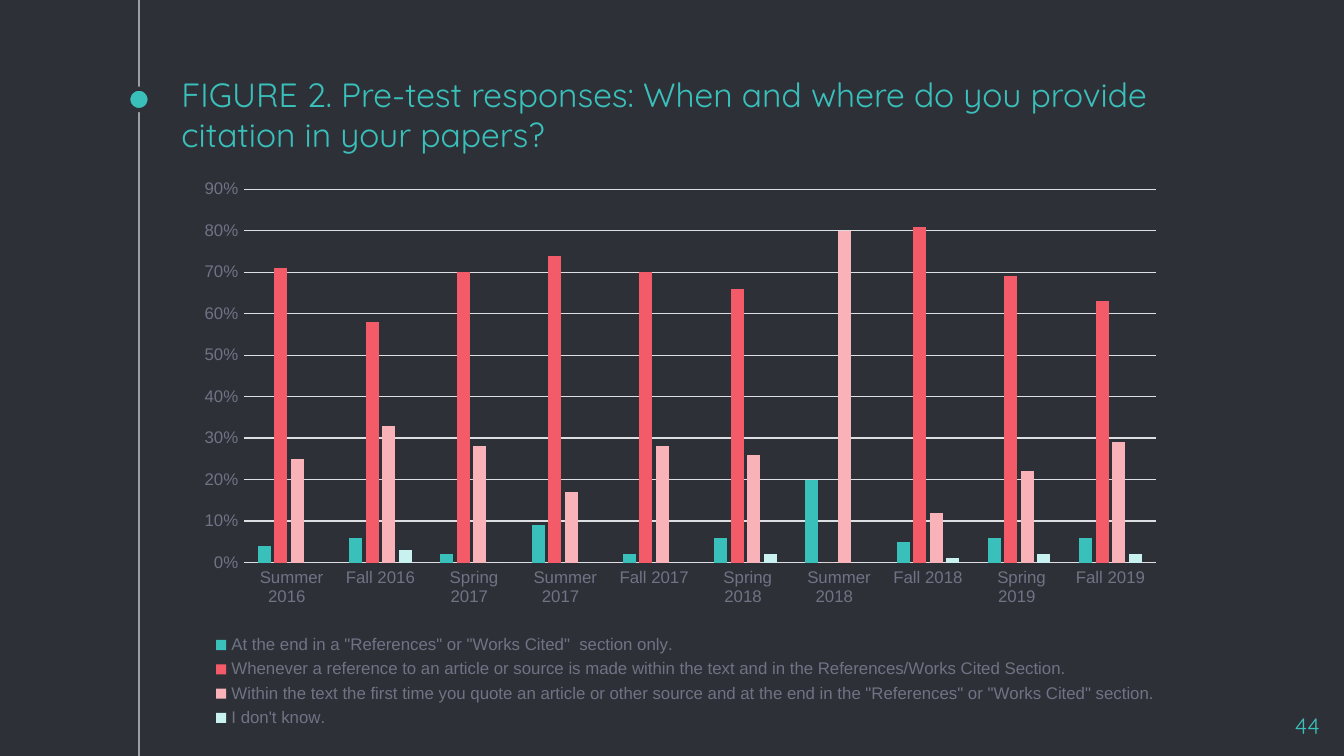
from lxml import etree
from pptx import Presentation
from pptx.chart.data import CategoryChartData as Data
from pptx.dml.color import RGBColor as RGB
from pptx.enum.chart import XL_CHART_TYPE as Kind, XL_LEGEND_POSITION as Side, XL_TICK_MARK as Tick
from pptx.enum.shapes import MSO_CONNECTOR as Conn, MSO_SHAPE as Shape
from pptx.enum.text import MSO_ANCHOR as Anchor, MSO_AUTO_SIZE as Fit, PP_ALIGN as Align
from pptx.oxml.ns import qn
from pptx.util import Pt

TITLE = "FIGURE 2. Pre-test responses: When and where do you provide citation in your papers?"
PAGE = "44"
TERMS = ["Summer 2016", "Fall 2016", "Spring 2017", "Summer 2017", "Fall 2017",
         "Spring 2018", "Summer 2018", "Fall 2018", "Spring 2019", "Fall 2019"]
SERIES = [
    ('At the end in a "References" or "Works Cited"  section only.', "39C0BA",
     [0.04, 0.06, 0.02, 0.09, 0.02, 0.06, 0.2, 0.05, 0.06, 0.06]),
    ("Whenever a reference to an article or source is made within the text"
     " and in the References/Works Cited Section.", "F35B69",
     [0.71, 0.58, 0.7, 0.74, 0.7, 0.66, 0, 0.81, 0.69, 0.63]),
    ("Within the text the first time you quote an article or other source"
     ' and at the end in the "References" or "Works Cited" section.', "FAB2B9",
     [0.25, 0.33, 0.28, 0.17, 0.28, 0.26, 0.8, 0.12, 0.22, 0.29]),
    ("I don't know.", "C9F1EF",
     [0, 0.03, 0, 0, 0, 0.02, 0, 0.01, 0.02, 0.02]),
]
DARK, TEAL, GREY, PALE, RAIL = "2E3037", "39C0BA", "6F7485", "DEDFE3", "999FA9"


def paint(fill, color):
    fill.solid()
    fill.fore_color.rgb = RGB.from_string(color)


def stroke(line, color, width):
    paint(line.fill, color)
    line.width = Pt(width)


def style(font, name, size, color):
    font.name, font.size = name, Pt(size)
    paint(font.fill, color)


def write(shape, text, size, anchor, align):
    frame = shape.text_frame
    frame.text = text
    frame.word_wrap, frame.auto_size = True, Fit.NONE
    frame.vertical_anchor = anchor
    frame.margin_left = frame.margin_right = Pt(7.2)
    frame.margin_top = frame.margin_bottom = Pt(7.2)
    para = frame.paragraphs[0]
    para.alignment = align
    style(para.runs[0].font, "Quicksand", size, TEAL)


def layout(box, inner, **sizes):
    for old in box.findall(qn("c:layout")):
        box.remove(old)
    node = etree.Element(qn("c:layout"))
    manual = etree.SubElement(node, qn("c:manualLayout"))
    parts = {"xMode": "edge", "yMode": "edge", **sizes}
    if inner:
        parts = {"layoutTarget": "inner", **parts}
    for tag, val in parts.items():
        etree.SubElement(manual, qn("c:" + tag)).set("val", str(val))
    box.insert(0 if inner else 1, node)


deck = Presentation()
deck.slide_width, deck.slide_height = Pt(720), Pt(405)
slide = deck.slides.add_slide(deck.slide_layouts[5])
paint(slide.background.fill, DARK)
shapes = slide.shapes

rail = shapes.add_connector(Conn.STRAIGHT, Pt(74.4), Pt(0), Pt(74.4), Pt(405))
stroke(rail.line, RAIL, 0.75)
etree.SubElement(rail._element.spPr, qn("a:effectLst"))

dot = shapes.add_shape(Shape.OVAL, Pt(68.7), Pt(47.5), Pt(11.5), Pt(11.5))
dot.shadow.inherit = False
paint(dot.fill, TEAL)
stroke(dot.line, DARK, 2.25)

title = shapes.title
title.left, title.top, title.width, title.height = Pt(90), Pt(62.6), Pt(540), Pt(27.4)
write(title, TITLE, 18, Anchor.BOTTOM, Align.LEFT)

page = shapes.add_textbox(Pt(671), Pt(374.4), Pt(43.2), Pt(24.5))
write(page, PAGE, 12, Anchor.TOP, Align.RIGHT)

data = Data(number_format="0%")
data.categories = [f" {term} " for term in TERMS]
for name, _, vals in SERIES:
    data.add_series(name, vals)
chart = shapes.add_chart(Kind.COLUMN_CLUSTERED, Pt(98.6), Pt(89.3),
                         Pt(531.4), Pt(303.1), data).chart
chart.has_title = False
style(chart.font, "Arial", 10, DARK)

plot = chart.plots[0]
plot.gap_width, plot.overlap, plot.vary_by_categories = 219, -27, False
for bars, (_, color, _) in zip(plot.series, SERIES):
    paint(bars.format.fill, color)
    bars.invert_if_negative = False

cats, vals = chart.category_axis, chart.value_axis
for axis in (cats, vals):
    axis.major_tick_mark = axis.minor_tick_mark = Tick.NONE
    style(axis.tick_labels.font, "Arial", 9, GREY)
stroke(cats.format.line, PALE, 0.75)
vals.format.line.fill.background()
vals.has_major_gridlines = True
stroke(vals.major_gridlines.format.line, PALE, 0.75)
vals.minimum_scale, vals.maximum_scale, vals.major_unit = 0, 0.9, 0.1
vals.tick_labels.number_format = "0%"
vals.tick_labels.number_format_is_linked = False

chart.has_legend = True
legend = chart.legend
legend.position, legend.include_in_layout = Side.BOTTOM, False
style(legend.font, "Arial", 9, GREY)
layout(chart._chartSpace.chart.plotArea, True, x=0.06, y=0.04, w=0.92, h=0.66)
layout(legend._element, False, x=0.02, y=0.82, w=0.97, h=0.18)

deck.save("out.pptx")
